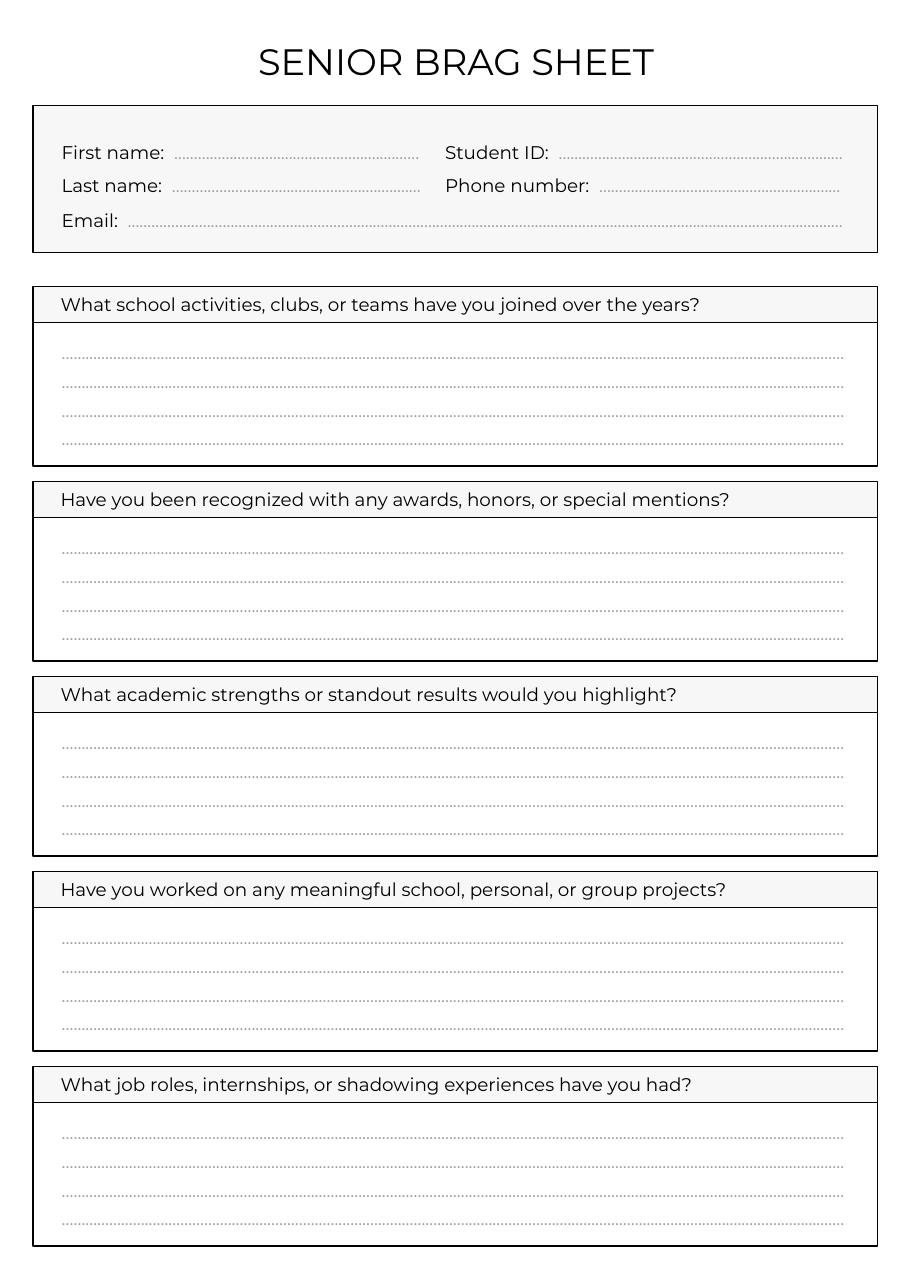
"""Build a one-page senior brag sheet with a details box and five question blocks."""
from pptx import Presentation
from pptx.dml.color import RGBColor
from pptx.enum import shapes, text
from pptx.util import Inches, Pt

BLACK, GREY, PALE = "000000", "9E9E9E", "F7F7F7"
LEFT, WIDE = 0.3, 7.67
INSET, SPAN = 0.56, 7.18


def box(home, top, high, fill=None):
    rect = home.add_shape(shapes.MSO_SHAPE.RECTANGLE, Inches(LEFT), Inches(top),
                          Inches(WIDE), Inches(high))
    rect.shadow.inherit = False
    rect.line.color.rgb = RGBColor.from_string(BLACK)
    rect.line.width = Pt(0.75)
    if fill:
        rect.fill.solid()
        rect.fill.fore_color.rgb = RGBColor.from_string(fill)
    else:
        rect.fill.background()
    return rect


def write(shape, rows, size=12, lead=1.0, align=text.PP_ALIGN.LEFT):
    frame = shape.text_frame
    frame.word_wrap = True
    frame.auto_size = text.MSO_AUTO_SIZE.NONE
    frame.vertical_anchor = text.MSO_ANCHOR.TOP
    frame.margin_left = frame.margin_right = frame.margin_top = frame.margin_bottom = 0
    for i, row in enumerate(rows):
        para = frame.add_paragraph() if i else frame.paragraphs[0]
        para.alignment = align
        para.line_spacing = lead
        for words, hue in row:
            run = para.add_run()
            run.text = words
            run.font.name = "Montserrat"
            run.font.size = Pt(size)
            run.font.color.rgb = RGBColor.from_string(hue)


deck = Presentation()
deck.slide_width, deck.slide_height = Inches(8.27), Inches(11.69)
page = deck.slides.add_slide(deck.slide_layouts[5])

title = page.shapes.title
title.left, title.top = Inches(1.99), Inches(0.35)
title.width, title.height = Inches(4.3), Inches(0.4)
write(title, [[("SENIOR BRAG SHEET", BLACK)]], size=24, align=text.PP_ALIGN.CENTER)

box(page.shapes, 0.96, 1.33, PALE)
fields = [
    (INSET, 1.18, 3.37, 0.5, [
        ("First name:  ", "……………………………………………..………"),
        ("Last name:  ", "…………………………………………….….….…")]),
    (4.04, 1.18, 3.7, 0.5, [
        ("Student ID:  ", "………………………….………………...……..…………"),
        ("Phone number:  ", "……………………………………………….……")]),
    (INSET, 1.8, SPAN, 0.2, [
        ("Email:  ", "………………………………….……………….……………….…….……………….…….………………………………….…….………….….……")]),
]
for *place, rows in fields:
    field = page.shapes.add_textbox(*map(Inches, place))
    write(field, [[(label, BLACK), (dots, GREY)] for label, dots in rows], lead=1.5)

asks = [
    "What school activities, clubs, or teams have you joined over the years?",
    "Have you been recognized with any awards, honors, or special mentions?",
    "What academic strengths or standout results would you highlight?",
    "Have you worked on any meaningful school, personal, or group projects?",
    "What job roles, internships, or shadowing experiences have you had?",
]
rule = "………………………………….……………………………….……………….…….……………….…….………………………………….…….…………….……"
for i, ask in enumerate(asks):
    top = 2.6 + i * 1.77
    block = page.shapes.add_group_shape().shapes
    box(block, top + 0.33, 1.3)
    head = box(block, top, 0.33, PALE)
    write(head, [[(ask, BLACK)]])
    head.text_frame.margin_left = Inches(0.25)
    head.text_frame.vertical_anchor = text.MSO_ANCHOR.MIDDLE
    lines = block.add_textbox(Inches(INSET), Inches(top + 0.44), Inches(SPAN), Inches(0.99))
    write(lines, [[(rule, GREY)]] * 4, lead=1.3)

deck.save("out.pptx")
